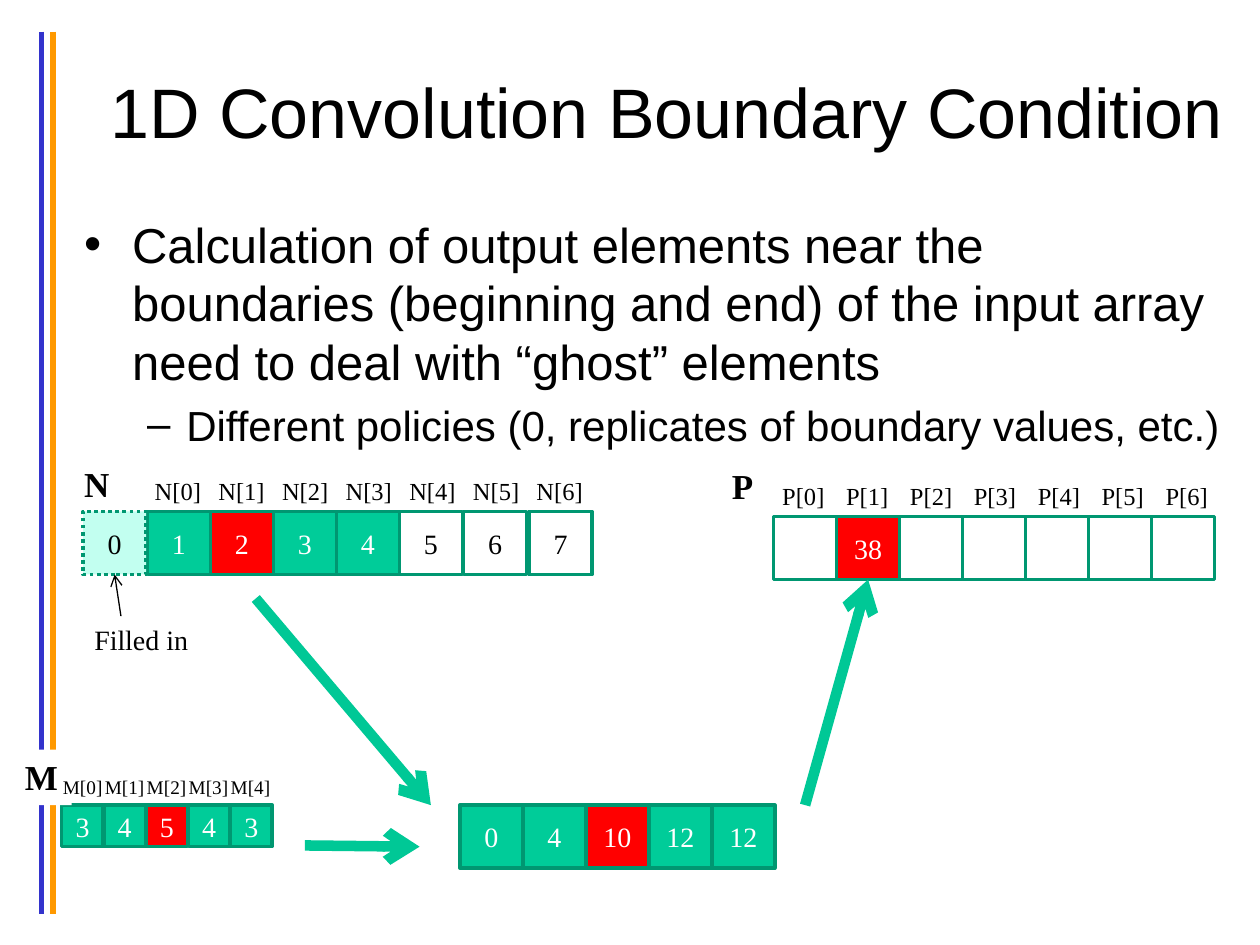
from lxml import etree
from pptx import Presentation
from pptx import util as u
from pptx.dml.color import RGBColor
from pptx.enum import dml, shapes, text
from pptx.oxml import ns

SERIF, SANS = "Times New Roman", "Arial"
GREEN, RED, EDGE, ARROW = "00CC99", "FF0000", "009771", "00C896"
BLACK, WHITE = "000000", "FFFFFF"


def color(code):
    return RGBColor.from_string(code)


def sub(parent, tag, **attrs):
    return etree.SubElement(parent, ns.qn(tag), **attrs)


def style(para, size, ink=BLACK, font=SERIF, bold=False):
    for run in para.runs:
        run.font.size = u.Pt(size)
        run.font.name = font
        run.font.bold = bold
        run.font.color.rgb = color(ink)


def add_line(slide, start, end, ink, width, arrow=False):
    ends = [u.Inches(v) for v in (*start, *end)]
    line = slide.shapes.add_connector(shapes.MSO_CONNECTOR.STRAIGHT, *ends)
    line.line.color.rgb = color(ink)
    line.line.width = u.Pt(width)
    if arrow:
        sub(line.line._get_or_add_ln(), "a:tailEnd", type="arrow")
    sub(line._element.spPr, "a:effectLst")


def add_label(slide, words, x, y, w, h, size, bold=False, fill=None):
    box = slide.shapes.add_textbox(*[u.Inches(v) for v in (x, y, w, h)])
    box.text_frame.word_wrap = False
    box.text_frame.text = words
    style(box.text_frame.paragraphs[0], size, bold=bold)
    if fill:
        box.fill.solid()
        box.fill.fore_color.rgb = color(fill)


def add_cell(slide, value, x, y, side, fill=None, ink=WHITE, dotted=False):
    cell = slide.shapes.add_shape(
        shapes.MSO_SHAPE.RECTANGLE, *[u.Inches(v) for v in (x, y, side, side)])
    cell.shadow.inherit = False
    if fill:
        cell.fill.solid()
        cell.fill.fore_color.rgb = color(fill)
    else:
        cell.fill.background()
    cell.line.color.rgb = color(EDGE)
    cell.line.width = u.Pt(2)
    if dotted:
        cell.line.dash_style = dml.MSO_LINE.ROUND_DOT
    if value:
        frame = cell.text_frame
        frame.margin_left = frame.margin_right = 0
        frame.margin_top = frame.margin_bottom = 0
        frame.vertical_anchor = text.MSO_ANCHOR.MIDDLE
        frame.text = value
        frame.paragraphs[0].alignment = text.PP_ALIGN.CENTER
        style(frame.paragraphs[0], 16, ink)


def add_row(slide, values, x, y, side, step, fill=None, ink=WHITE, focus=None):
    """Row of cells; the one at index focus is red."""
    for i, value in enumerate(values):
        add_cell(slide, value, x + i * step, y, side,
                 RED if i == focus else fill, ink)


def add_names(slide, array, count, x, y, w, h, step, size):
    for i in range(count):
        add_label(slide, f"{array}[{i}]", x + i * step, y, w, h, size)


def add_title(slide, words):
    box = slide.shapes.add_textbox(
        u.Inches(0.75), u.Inches(0.25), u.Inches(9.08), u.Inches(1.25))
    frame = box.text_frame
    frame.word_wrap = True
    frame.vertical_anchor = text.MSO_ANCHOR.MIDDLE
    frame.text = words
    frame.paragraphs[0].alignment = text.PP_ALIGN.CENTER
    style(frame.paragraphs[0], 40, font=SANS)


def add_bullets(slide, items):
    """Items are (words, size, mark, left margin, hanging indent)."""
    box = slide.shapes.add_textbox(
        u.Inches(0.57), u.Inches(1.65), u.Inches(9.25), u.Inches(2.42))
    frame = box.text_frame
    frame.word_wrap = True
    for i, (words, size, mark, left, hang) in enumerate(items):
        para = frame.add_paragraph() if i else frame.paragraphs[0]
        para.text = words
        para.level = i
        para.space_before = u.Pt(size * 0.2)
        style(para, size, font=SANS)
        props = para._p.get_or_add_pPr()
        props.set("marL", str(u.Inches(left)))
        props.set("indent", str(-u.Inches(hang)))
        sub(props, "a:buFont", typeface=SANS)
        sub(props, "a:buChar", char=mark)


def add_input(slide):
    add_label(slide, "N", 0.57, 3.62, 0.41, 0.44, 20, bold=True)
    add_row(slide, "1234", 1.17, 4.06, 0.5, 0.5, GREEN, focus=1)
    add_row(slide, "5", 3.17, 4.06, 0.5, 0.5, ink=BLACK)
    add_row(slide, "67", 3.68, 4.06, 0.5, 0.52, ink=BLACK)
    add_cell(slide, "0", 0.66, 4.06, 0.5, "C2FFF0", BLACK, dotted=True)
    add_names(slide, "N", 7, 1.13, 3.73, 0.57, 0.34, 0.505, 14)
    add_label(slide, "Filled in", 0.65, 4.89, 0.96, 0.37, 16)
    add_line(slide, (0.96, 4.89), (0.91, 4.56), BLACK, 0.75, arrow=True)


def add_mask(slide):
    add_row(slide, "34543", 0.49, 6.39, 0.33, 0.335, GREEN, focus=2)
    add_label(slide, "M", 0.1, 5.95, 0.47, 0.44, 20, bold=True, fill=WHITE)
    add_names(slide, "M", 5, 0.4, 6.1, 0.52, 0.29, 0.333, 11)


def add_output(slide):
    add_label(slide, "P", 5.71, 3.64, 0.37, 0.44, 20, bold=True)
    add_row(slide, ["", "38"] + [""] * 5, 6.14, 4.1, 0.5, 0.5, focus=1)
    add_names(slide, "P", 7, 6.11, 3.77, 0.54, 0.34, 0.507, 14)


def main():
    deck = Presentation()
    deck.slide_width, deck.slide_height = u.Inches(10), u.Inches(7.5)
    slide = deck.slides.add_slide(deck.slide_layouts[6])
    for x, ink in ((0.33, "3333CC"), (0.42, "FF9900")):
        add_line(slide, (x, 0.25), (x, 7.25), ink, 3)
    add_mask(slide)
    add_row(slide, ["0", "4", "10", "12", "12"], 3.65, 6.39, 0.5, 0.5,
            GREEN, focus=2)
    add_output(slide)
    add_input(slide)
    for start, end in (((2.42, 6.71), (3.33, 6.72)),
                       ((6.39, 6.39), (6.89, 4.6)),
                       ((2.03, 4.75), (3.42, 6.39))):
        add_line(slide, start, end, ARROW, 6, arrow=True)
    add_title(slide, "1D Convolution Boundary Condition")
    add_bullets(slide, [
        ("Calculation of output elements near the boundaries (beginning and "
         "end) of the input array need to deal with “ghost” elements",
         28, "•", 0.38, 0.38),
        ("Different policies (0, replicates of boundary values, etc.)",
         24, "–", 0.81, 0.31)])
    deck.save("out.pptx")


if __name__ == "__main__":
    main()
